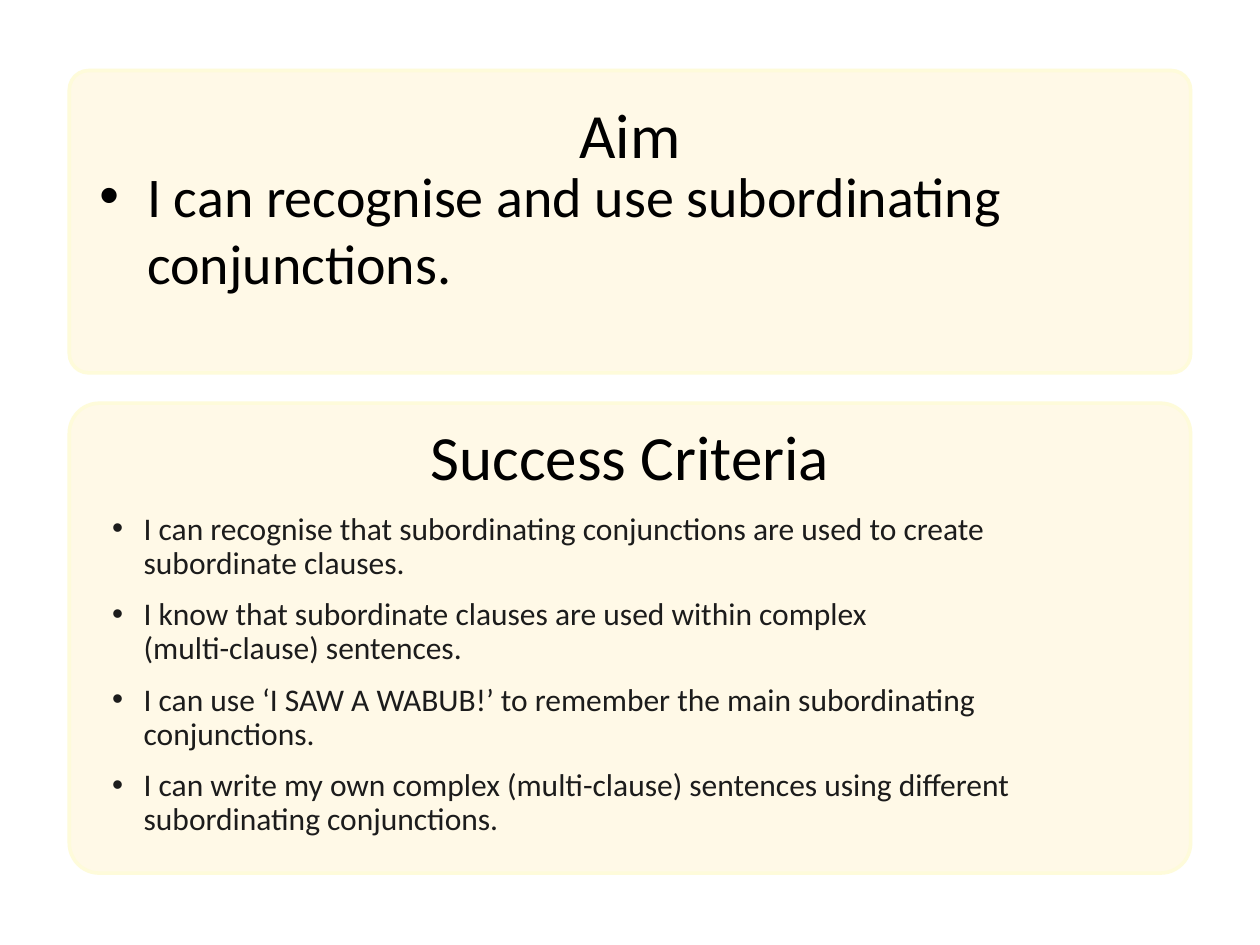
from pptx import Presentation
from pptx.dml.color import RGBColor
from pptx.enum import shapes, text
from pptx.oxml.ns import qn
from pptx.util import Inches, Pt
from lxml import etree

CARD_LEFT, CARD_W = 0.55, 8.9
TEXT_LEFT, TEXT_W = 0.69, 8.62


def color(hex_code):
    return RGBColor.from_string(hex_code)


def add_card(s, top, height):
    sp = s.shapes.add_shape(shapes.MSO_SHAPE.ROUNDED_RECTANGLE, Inches(CARD_LEFT),
                            Inches(top), Inches(CARD_W), Inches(height))
    sp.adjustments[0] = 0.064
    sp.shadow.inherit = False
    sp.fill.solid()
    sp.fill.fore_color.rgb = color("FFF9E7")
    sp.line.color.rgb = color("FEFBDA")
    sp.line.width = Pt(2)


def add_text(s, top, height, lines, size, hex_code, insets):
    tf = s.shapes.add_textbox(Inches(TEXT_LEFT), Inches(top),
                              Inches(TEXT_W), Inches(height)).text_frame
    tf.word_wrap = True
    tf.margin_left, tf.margin_top, tf.margin_right, tf.margin_bottom = map(Inches, insets)
    for i, line in enumerate(lines):
        p = tf.paragraphs[0] if i == 0 else tf.add_paragraph()
        p.text = line
        for r in p.runs:
            r.font.name = "Calibri"
            r.font.size = Pt(size)
            r.font.color.rgb = color(hex_code)
    return tf


def add_heading(s, top, title):
    tf = add_text(s, top, 0.59, [title], 36, "000000", (0, 0, 0, 0))
    tf.vertical_anchor = text.MSO_ANCHOR.MIDDLE
    p = tf.paragraphs[0]
    p.alignment = text.PP_ALIGN.CENTER
    p.line_spacing = 0.9


def add_bullets(tf, indent):
    for p in tf.paragraphs:
        pPr = p._p.get_or_add_pPr()
        pPr.set("marL", str(Inches(indent)))
        pPr.set("indent", str(-Inches(indent)))
        etree.SubElement(pPr, qn("a:buFont")).set("typeface", "Arial")
        etree.SubElement(pPr, qn("a:buChar")).set("char", "•")


def add_aim(s, top, height):
    add_card(s, top, height)
    add_heading(s, top + 0.24, "Aim")
    tf = add_text(s, top + 0.67, 1.54,
                  ["I can recognise and use subordinating conjunctions."],
                  32, "000000", (0.1, 0.05, 0.1, 0.05))
    add_bullets(tf, 0.38)


def add_criteria(s, top, height, criteria):
    add_card(s, top, height)
    add_heading(s, top + 0.16, "Success Criteria")
    tf = add_text(s, top + 0.59, 1.54, criteria, 18, "1C1C1C", (0.2, 0.28, 0.28, 0.2))
    for p in tf.paragraphs:
        p.line_spacing = 0.9
        p.space_before = Pt(10)
    add_bullets(tf, 0.25)


def main():
    prs = Presentation()
    prs.slide_width, prs.slide_height = Inches(10), Inches(7.5)
    s = prs.slides.add_slide(prs.slide_layouts[6])

    # Success criteria card
    add_criteria(s, 3.2, 3.73, [
        "I can recognise that subordinating conjunctions are used to create subordinate clauses.",
        "I know that subordinate clauses are used within complex \v(multi-clause) sentences.",
        "I can use ‘I SAW A WABUB!’ to remember the main subordinating conjunctions.",
        "I can write my own complex (multi-clause) sentences using different "
        "subordinating conjunctions.",
    ])
    # Aim card
    add_aim(s, 0.56, 2.4)

    prs.save("out.pptx")


if __name__ == "__main__":
    main()
